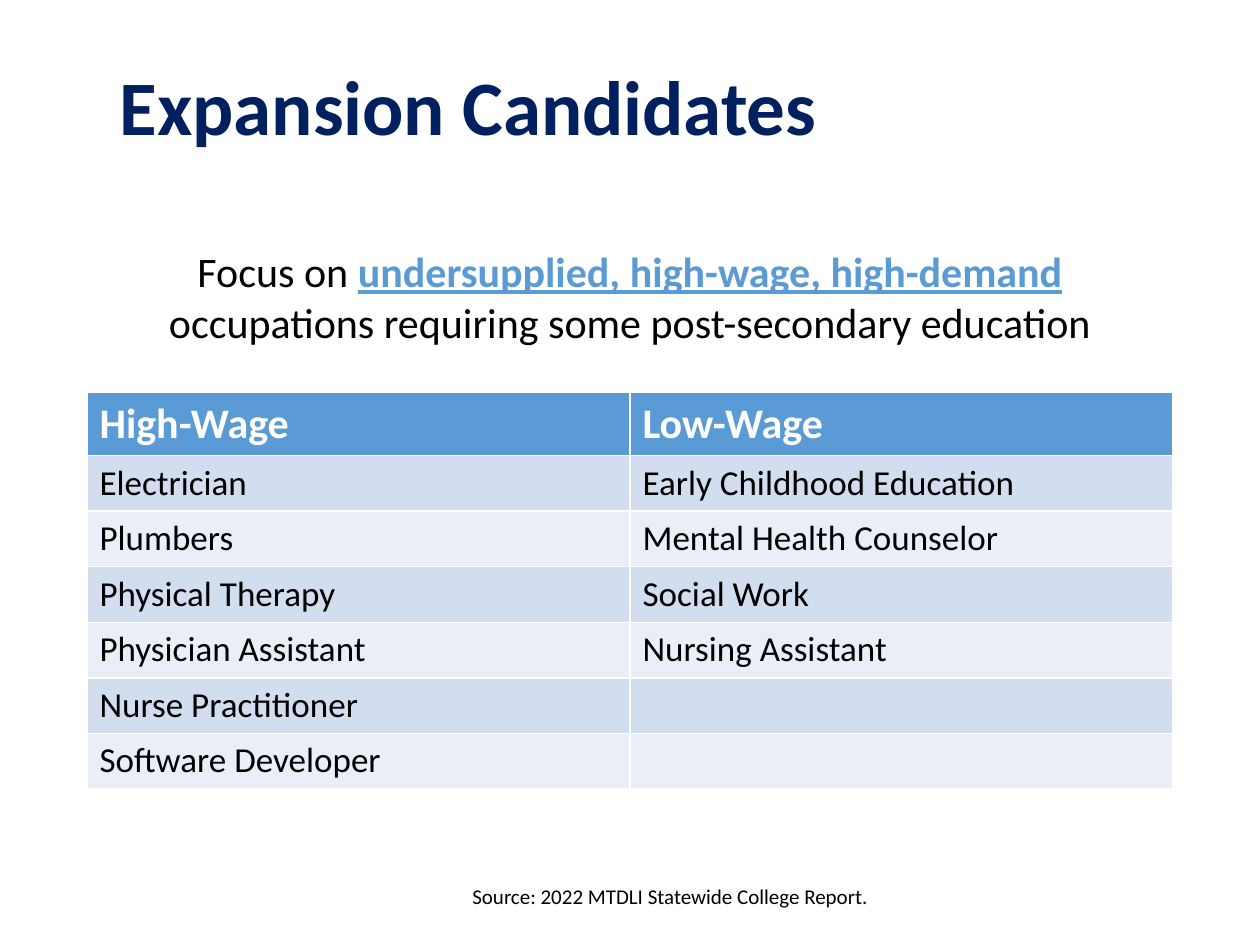
from pptx import Presentation
from pptx.dml.color import RGBColor
from pptx.enum.text import MSO_ANCHOR, PP_ALIGN
from pptx.util import Inches, Pt

NAVY = RGBColor(0x00, 0x20, 0x60)
BLUE = RGBColor(0x5B, 0x9B, 0xD5)
BANDS = [RGBColor(0xD2, 0xDE, 0xEF), RGBColor(0xEA, 0xEF, 0xF7)]
BLACK = RGBColor(0, 0, 0)
WHITE = RGBColor(255, 255, 255)
FONT = "Calibri"

TITLE = "Expansion Candidates"
FOCUS = [
    ("Focus on ", False, False),
    ("undersupplied,", True, True),
    (" ", False, True),
    ("high-wage, high-demand ", True, True),
    ("occupations requiring some post-secondary education", False, False),
]
OCCUPATIONS = [
    ("High-Wage", "Low-Wage"),
    ("Electrician", "Early Childhood Education"),
    ("Plumbers", "Mental Health Counselor"),
    ("Physical Therapy", "Social Work"),
    ("Physician Assistant", "Nursing Assistant"),
    ("Nurse Practitioner", ""),
    ("Software Developer", ""),
]
SOURCE = "Source: 2022 MTDLI Statewide College Report."
HEADER_HEIGHT, ROW_HEIGHT = 0.5, 0.44


def style(font, size, color, bold=False):
    font.name, font.size, font.bold = FONT, Pt(size), bold
    font.color.rgb = color


def add_text_box(page, left, top, width, height):
    box = page.shapes.add_textbox(*map(Inches, (left, top, width, height)))
    box.text_frame.word_wrap = True
    return box.text_frame.paragraphs[0]


def add_title(page):
    title = page.shapes.title
    title.left, title.top = Inches(0.85), Inches(0.15)
    title.width, title.height = Inches(8.8), Inches(1.45)
    title.text_frame.text = TITLE
    title.text_frame.vertical_anchor = MSO_ANCHOR.MIDDLE
    para = title.text_frame.paragraphs[0]
    para.alignment = PP_ALIGN.LEFT
    para.line_spacing = 0.9
    style(para.font, 44, NAVY, True)


def add_occupations(page):
    height = HEADER_HEIGHT + ROW_HEIGHT * (len(OCCUPATIONS) - 1)
    table = page.shapes.add_table(
        len(OCCUPATIONS), 2, Inches(0.69), Inches(3.11), Inches(8.62), Inches(height)
    ).table
    for index, names in enumerate(OCCUPATIONS):
        header = index == 0
        table.rows[index].height = Inches(HEADER_HEIGHT if header else ROW_HEIGHT)
        for column, name in enumerate(names):
            cell = table.cell(index, column)
            cell.fill.solid()
            cell.fill.fore_color.rgb = BLUE if header else BANDS[(index - 1) % 2]
            cell.text = name
            font = cell.text_frame.paragraphs[0].font
            style(font, 24 if header else 20, WHITE if header else BLACK, header)


def add_focus(page):
    para = add_text_box(page, 1.05, 1.9, 7.9, 0.91)
    para.alignment = PP_ALIGN.CENTER
    for text, bold, underlined in FOCUS:
        span = para.add_run()
        span.text = text
        style(span.font, 24, BLUE if underlined else BLACK, bold)
        span.font.underline = underlined


def add_source(page):
    para = add_text_box(page, 3.65, 6.96, 6.19, 0.3)
    para.text = SOURCE
    style(para.font, 12, BLACK)


def main():
    deck = Presentation()
    deck.slide_width, deck.slide_height = Inches(10), Inches(7.5)
    page = deck.slides.add_slide(deck.slide_layouts[5])
    add_title(page)
    add_occupations(page)
    add_focus(page)
    add_source(page)
    deck.save("out.pptx")


if __name__ == "__main__":
    main()
